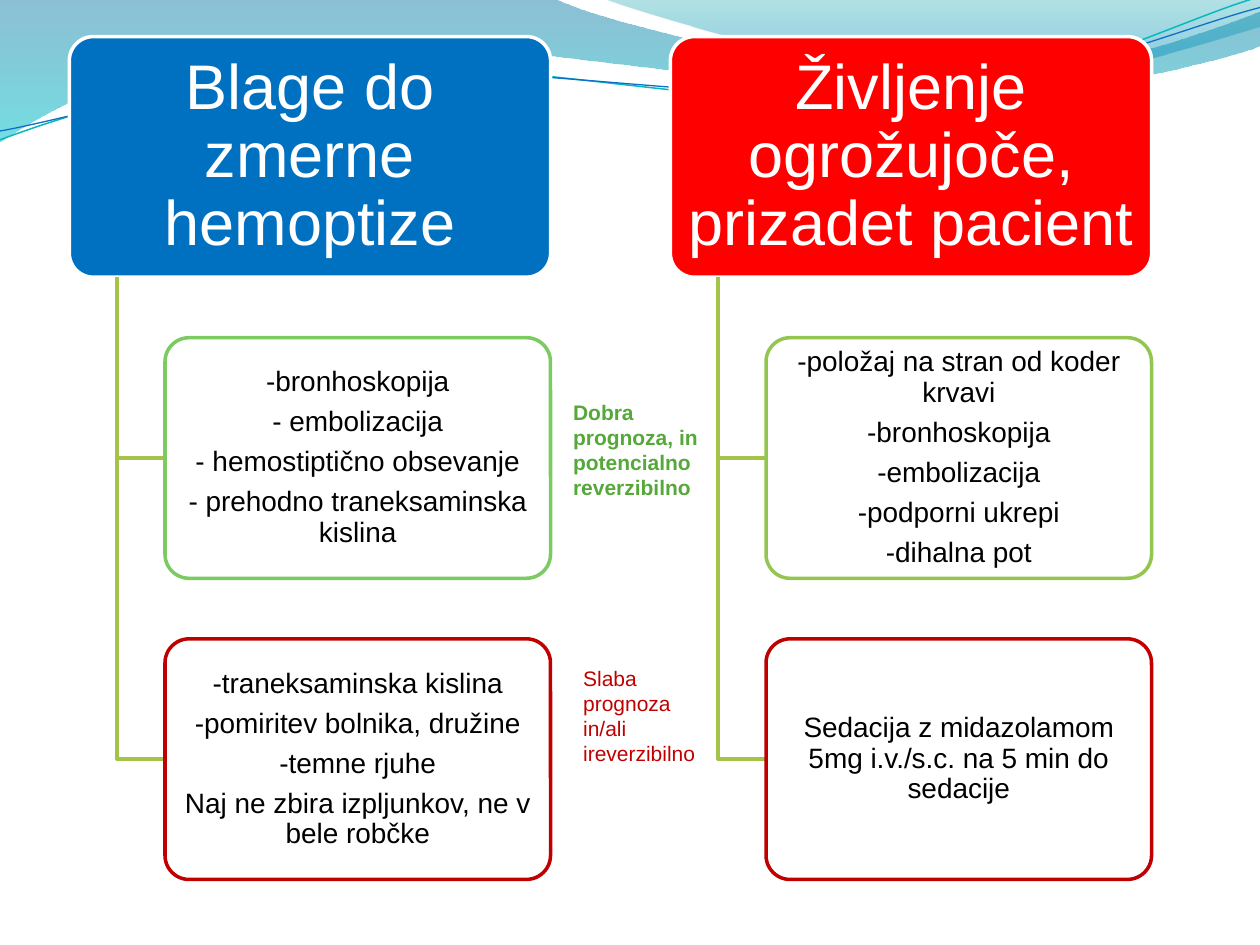
"""Build a slide comparing treatment of mild and life-threatening hemoptysis."""
import math

import pptx
import pptx.dml.color
import pptx.enum.shapes
import pptx.enum.text
import pptx.oxml
import pptx.oxml.ns
import pptx.util

Inches = pptx.util.Inches
Pt = pptx.util.Pt
RGBColor = pptx.dml.color.RGBColor

WHITE = RGBColor(0xFF, 0xFF, 0xFF)
BLACK = RGBColor(0x00, 0x00, 0x00)
BLUE = RGBColor(0x00, 0x70, 0xC0)
RED = RGBColor(0xFF, 0x00, 0x00)
DARK_RED = RGBColor(0xC0, 0x00, 0x00)
GREEN = RGBColor(0x7C, 0xCA, 0x62)
LIME = RGBColor(0x95, 0xC5, 0x51)
OLIVE = RGBColor(0xA5, 0xC2, 0x49)
TEXT_GREEN = RGBColor(0x55, 0xA8, 0x39)
WAVE_BLUE = RGBColor(0x00, 0x74, 0xA0)
WAVE_CYAN = RGBColor(0x00, 0xC4, 0xCD)
WAVE_SKY = RGBColor(0x00, 0x8A, 0xBF)
WAVE_TEAL = RGBColor(0x00, 0xA0, 0xA8)
LINE_TEAL = RGBColor(0x09, 0xB7, 0xBF)
LINE_BLUE = RGBColor(0x0F, 0x6F, 0xC6)

BOX_HEIGHT = 1.91
ROW_TOP = 0.29
ROW_PITCH = 2.39
HEAD_WIDTH = 3.82
CHILD_WIDTH = 3.06
STEM = 0.38
TILT = 2.7


class SlideBuilder:
    """Hold the style and the current slide."""

    font = "Arial"

    def __init__(self, slide):
        self.s = slide

    def set_alpha(self, color, percent):
        """Add an opacity to a colour element."""
        color.append(pptx.oxml.parse_xml(
            '<a:alpha %s val="%d"/>' % (pptx.oxml.ns.nsdecls("a"), percent * 1000)))

    def outline(self, start, segments, close):
        """Add a freeform of lines (x, y) and cubic curves (six numbers)."""
        builder = self.s.shapes.build_freeform(Inches(start[0]), Inches(start[1]), scale=1.0)
        ends = [(Inches(seg[-2]), Inches(seg[-1])) for seg in segments]
        builder.add_line_segments(ends, close=close)
        sp = builder.convert_to_shape()
        sp.shadow.inherit = False
        for element, seg in zip(sp._element.xpath(".//a:lnTo"), segments):
            if len(seg) == 6:
                points = "".join(
                    '<a:pt x="%d" y="%d"/>' % (Inches(x) - sp.left, Inches(y) - sp.top)
                    for x, y in zip(seg[::2], seg[1::2]))
                curve = pptx.oxml.parse_xml("<a:cubicBezTo %s>%s</a:cubicBezTo>" % (
                    pptx.oxml.ns.nsdecls("a"), points))
                element.getparent().replace(element, curve)
        return sp

    def line(self, start, segments, color, width):
        """Add an open, unfilled line."""
        sp = self.outline(start, segments, False)
        sp.fill.background()
        sp.line.color.rgb = color
        sp.line.width = Pt(width)
        return sp

    def tilted_line(self, center, start, segments, color, width):
        """Add a line that is drawn level and then rotated about its centre."""
        cos, sin = math.cos(math.radians(TILT)), math.sin(math.radians(TILT))

        def level(values):
            result = []
            for x, y in zip(values[::2], values[1::2]):
                dx, dy = x - center[0], y - center[1]
                result += [center[0] + dx * cos - dy * sin, center[1] + dx * sin + dy * cos]
            return result

        sp = self.line(level(start), [level(seg) for seg in segments], color, width)
        sp.rotation = 360 - TILT

    def wave(self, start, segments, angle, stops):
        """Add a closed shape with a translucent gradient."""
        sp = self.outline(start, segments, True)
        sp.line.fill.background()
        sp.fill.gradient()
        sp.fill.gradient_angle = angle
        for stop, (position, color, _) in zip(sp.fill.gradient_stops, stops):
            stop.position = position
            stop.color.rgb = color
        colors = sp._element.xpath(".//a:gs/a:srgbClr")
        for element, (_, _, opacity) in zip(colors, stops):
            self.set_alpha(element, opacity)

    def format_text(self, tf, size, color, bold=False):
        """Format every run in a text frame."""
        tf.word_wrap = True
        for p in tf.paragraphs:
            for r in p.runs:
                r.font.name = self.font
                r.font.size = Pt(size)
                r.font.bold = bold
                r.font.color.rgb = color

    def box(self, left, top, width, text, size, color, fill, border, inset, opacity=100):
        """Add a rounded box with centred text; a fill of None leaves it clear."""
        sp = self.s.shapes.add_shape(
            pptx.enum.shapes.MSO_SHAPE.ROUNDED_RECTANGLE,
            Inches(left), Inches(top), Inches(width), Inches(BOX_HEIGHT))
        sp.adjustments[0] = 0.1
        sp.shadow.inherit = False
        if fill is None:
            sp.fill.background()
        else:
            sp.fill.solid()
            sp.fill.fore_color.rgb = fill
            if opacity < 100:
                self.set_alpha(sp._element.xpath("./p:spPr/a:solidFill/a:srgbClr")[0], opacity)
        sp.line.color.rgb = border
        sp.line.width = Pt(2)
        tf = sp.text_frame
        tf.text = text
        tf.vertical_anchor = pptx.enum.text.MSO_ANCHOR.MIDDLE
        tf.margin_left = tf.margin_right = Inches(inset)
        tf.margin_top = tf.margin_bottom = Inches(inset * 0.7)
        for p in tf.paragraphs:
            p.alignment = pptx.enum.text.PP_ALIGN.CENTER
            p.line_spacing = 0.9
            p.space_after = Pt(size * 0.35)
        self.format_text(tf, size, color)

    def label(self, left, top, text, color, bold):
        """Add a small text box."""
        sp = self.s.shapes.add_textbox(Inches(left), Inches(top), Inches(1.25), Inches(0.91))
        tf = sp.text_frame
        tf.text = text
        self.format_text(tf, 12, color, bold)
        tf.auto_size = pptx.enum.text.MSO_AUTO_SIZE.SHAPE_TO_FIT_TEXT


COLUMNS = [
    (0.55, "Blage do zmerne hemoptize", BLUE, [
        (WHITE, GREEN, "-bronhoskopija\n- embolizacija\n- hemostiptično obsevanje\n"
                       "- prehodno traneksaminska kislina"),
        (WHITE, DARK_RED, "-traneksaminska kislina\n-pomiritev bolnika, družine\n"
                          "-temne rjuhe\nNaj ne zbira izpljunkov, ne v bele robčke"),
    ]),
    (5.32, "Življenje ogrožujoče, prizadet pacient", RED, [
        (WHITE, LIME, "-položaj na stran od koder krvavi\n-bronhoskopija\n-embolizacija\n"
                      "-podporni ukrepi\n-dihalna pot"),
        (None, DARK_RED, "Sedacija z midazolamom 5mg i.v./s.c. na 5 min do sedacije"),
    ]),
]


def main():
    prs = pptx.Presentation()
    prs.slide_width, prs.slide_height = Inches(10), Inches(7.5)
    b = SlideBuilder(prs.slides.add_slide(prs.slide_layouts[6]))

    b.wave((0, 0), [
        (4.4, -0.01), (4.76, 0.17, 6.64, 0.63, 7.58, 0.63), (8.53, 0.63, 9.58, 0.26, 10, 0.09),
        (10.01, 0.36), (9.83, 0.44, 8.7, 0.76, 7.46, 0.75), (6.22, 0.75, 3.82, 0.28, 2.57, 0.34),
        (1.29, 0.35, 0.46, 0.83, -0.01, 1.13),
    ], 270, [(0, WAVE_BLUE, 45), (1, WAVE_CYAN, 55)])
    b.wave((4.79, -0.01), [
        (5.09, 0.11, 6.82, 0.62, 7.69, 0.65), (8.56, 0.69, 9.61, 0.32, 10, 0.21), (10, 0),
    ], 90, [(0.2, WAVE_SKY, 45), (1, WAVE_TEAL, 30)])
    b.tilted_line((4.99, 0.57), (0, 1.11), [
        (0.48, 0.93, 1.58, 0.57, 2.77, 0.52), (3.95, 0.46, 5.93, 0.89, 7.13, 0.8),
        (8.33, 0.71, 9.38, 0.15, 9.98, -0.02)], LINE_TEAL, 0.85)
    b.tilted_line((5, 0.59), (0, 1.04), [
        (0.47, 0.96, 1.64, 0.61, 2.83, 0.56), (4.03, 0.51, 5.97, 0.83, 7.17, 0.75),
        (8.36, 0.67, 9.41, 0.21, 10, 0.06)], LINE_BLUE, 0.75)

    for left, title, fill, children in COLUMNS:
        b.box(left, ROW_TOP, HEAD_WIDTH, title, 36, WHITE, fill, WHITE, 0.07)
        stem_x = left + STEM
        child_x = stem_x + STEM
        for row, (child_fill, border, text) in enumerate(children, 1):
            top = ROW_TOP + row * ROW_PITCH
            middle = top + BOX_HEIGHT / 2
            b.line((stem_x, ROW_TOP + BOX_HEIGHT), [(stem_x, middle), (child_x, middle)], OLIVE, 2)
            b.box(child_x, top, CHILD_WIDTH, text, 16, BLACK, child_fill, border, 0.03, 90)

    b.label(4.45, 3.12, "Dobra prognoza, in potencialno reverzibilno", TEXT_GREEN, True)
    b.label(4.53, 5.23, "Slaba prognoza in/ali ireverzibilno", DARK_RED, False)
    prs.save("out.pptx")


if __name__ == "__main__":
    main()
